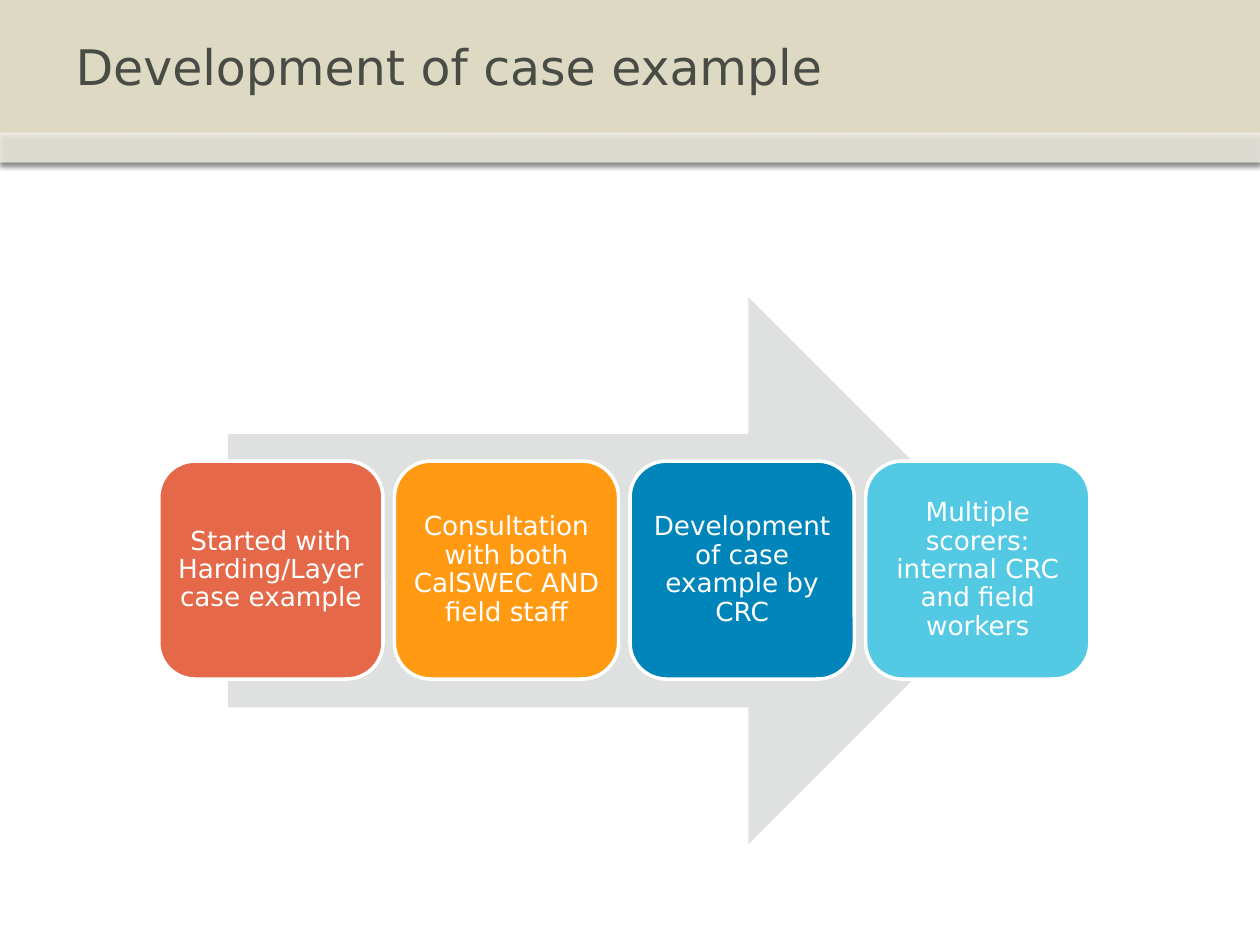
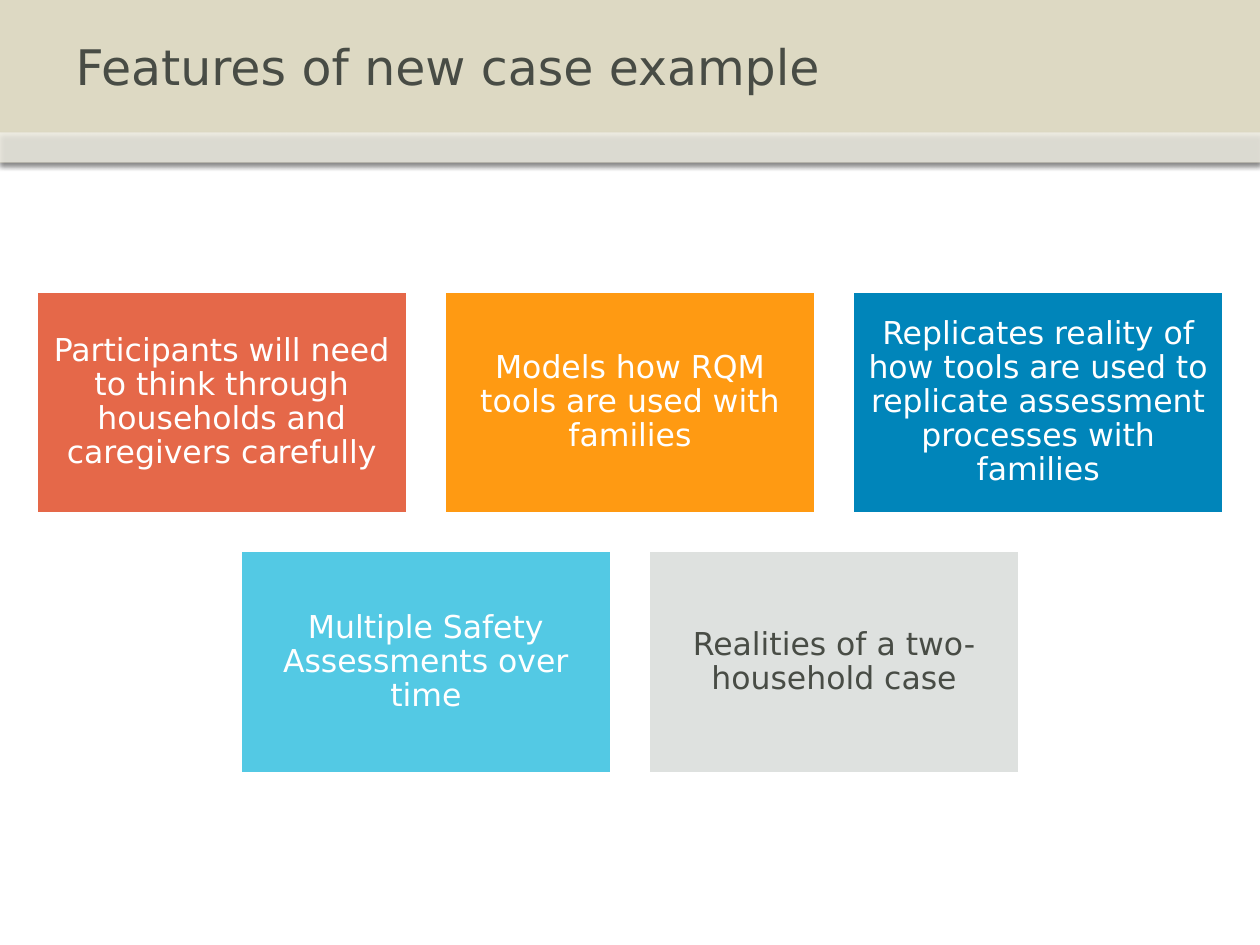
from dataclasses import dataclass

import pptx
import pptx.dml.color
import pptx.enum.shapes
import pptx.enum.text
import pptx.oxml
import pptx.oxml.ns
import pptx.util

Inches, Pt = pptx.util.Inches, pptx.util.Pt
RGB = pptx.dml.color.RGBColor.from_string
SHAPE = pptx.enum.shapes.MSO_SHAPE
ALIGN = pptx.enum.text.PP_ALIGN
MIDDLE = pptx.enum.text.MSO_ANCHOR.MIDDLE


@dataclass(frozen=True)
class Theme:
    font: str = "DejaVu Sans"
    ink: str = "484C45"
    white: str = "FFFFFF"
    sand: str = "DDD9C3"
    gray: str = "DEE1DF"
    accents: tuple = ("E56849", "FF9A12", "0085BA", "53C9E4")
    title_size: int = 28
    step_size: int = 15
    feature_size: int = 18


theme = Theme()
NS = pptx.oxml.ns.nsdecls("a")
BAND_SHADOW = (
    f'<a:effectLst {NS}><a:outerShdw blurRad="{Pt(3.1)}" dist="{Pt(1.8)}" dir="5400000">'
    '<a:srgbClr val="000000"><a:alpha val="35000"/></a:srgbClr>'
    '</a:outerShdw></a:effectLst>'
)


def add_block(s, kind, box, fill, outlined=True):
    sp = s.shapes.add_shape(kind, *[Inches(v) for v in box])
    sp.shadow.inherit = False
    sp.fill.solid()
    sp.fill.fore_color.rgb = RGB(fill)
    if outlined:
        sp.line.color.rgb = RGB(theme.white)
        sp.line.width = Pt(2)
    else:
        sp.line.fill.background()
    return sp


def write(sp, text, size, color, align, inset):
    tf = sp.text_frame
    tf.word_wrap = True
    tf.vertical_anchor = MIDDLE
    tf.margin_left = tf.margin_right = tf.margin_top = tf.margin_bottom = Inches(inset)
    p = tf.paragraphs[0]
    p.alignment = align
    if align == ALIGN.CENTER:
        p.line_spacing = 0.9
    r = p.add_run()
    r.text = text
    r.font.name = theme.font
    r.font.size = Pt(size)
    r.font.color.rgb = RGB(color)


prs = pptx.Presentation()
prs.slide_width, prs.slide_height = Inches(10), Inches(7.5)
layout = prs.slide_layouts[5]

# Slides and titles
slides = []
for title in ("Development of case example", "Features of new case example"):
    s = prs.slides.add_slide(layout)
    sp = s.shapes.title
    sp.left, sp.top, sp.width, sp.height = Inches(0.5), 0, Inches(9), Inches(1.05)
    write(sp, title, theme.title_size, theme.ink, ALIGN.LEFT, 0.1)
    slides.append(s)
steps_slide, features_slide = slides

# Header bands, moved to the shared layout behind its placeholders
header = add_block(steps_slide, SHAPE.RECTANGLE, (0, 0, 10, 1.29), theme.sand, False)
strip = add_block(steps_slide, SHAPE.RECTANGLE, (0, 1.05, 10, 0.24), theme.white, False)
strip_color = strip.element.spPr.find(".//" + pptx.oxml.ns.qn("a:srgbClr"))
strip_color.append(pptx.oxml.parse_xml(f'<a:alpha {NS} val="53000"/>'))
for i, band in enumerate((header, strip)):
    spPr = band.element.spPr
    spPr.replace(spPr.find(pptx.oxml.ns.qn("a:effectLst")), pptx.oxml.parse_xml(BAND_SHADOW))
    layout.shapes.element.insert(2 + i, band.element)

# Slide 1: four steps along an arrow
add_block(steps_slide, SHAPE.RIGHT_ARROW, (1.81, 2.36, 6.3, 4.34), theme.gray, False)
steps = (
    "Started with Harding/Layer case example",
    "Consultation with both CalSWEC AND field staff",
    "Development of case example by CRC",
    "Multiple scorers: internal CRC and field workers",
)
for i, (text, fill) in enumerate(zip(steps, theme.accents)):
    box = (1.26 + 1.87 * i, 3.66, 1.78, 1.73)
    sp = add_block(steps_slide, SHAPE.ROUNDED_RECTANGLE, box, fill)
    write(sp, text, theme.step_size, theme.white, ALIGN.CENTER, 0.06)

# Slide 2: feature cards in centred rows
white = theme.white
red, orange, blue, cyan = theme.accents
feature_rows = (
    (
        ("Participants will need to think through households and caregivers carefully", red, white),
        ("Models how RQM tools are used with families", orange, white),
        ("Replicates reality of how tools are used to replicate assessment processes with families",
         blue, white),
    ),
    (
        ("Multiple Safety Assessments over time", cyan, white),
        ("Realities of a two-household case", theme.gray, theme.ink),
    ),
)
card_w, card_h, gap = 2.95, 1.77, 0.29
for row, cards in enumerate(feature_rows):
    left = (10 - len(cards) * (card_w + gap) + gap) / 2
    top = 2.31 + row * (card_h + gap)
    for col, (text, fill, color) in enumerate(cards):
        box = (left + col * (card_w + gap), top, card_w, card_h)
        sp = add_block(features_slide, SHAPE.RECTANGLE, box, fill)
        write(sp, text, theme.feature_size, color, ALIGN.CENTER, 0.09)

prs.save("out.pptx")
